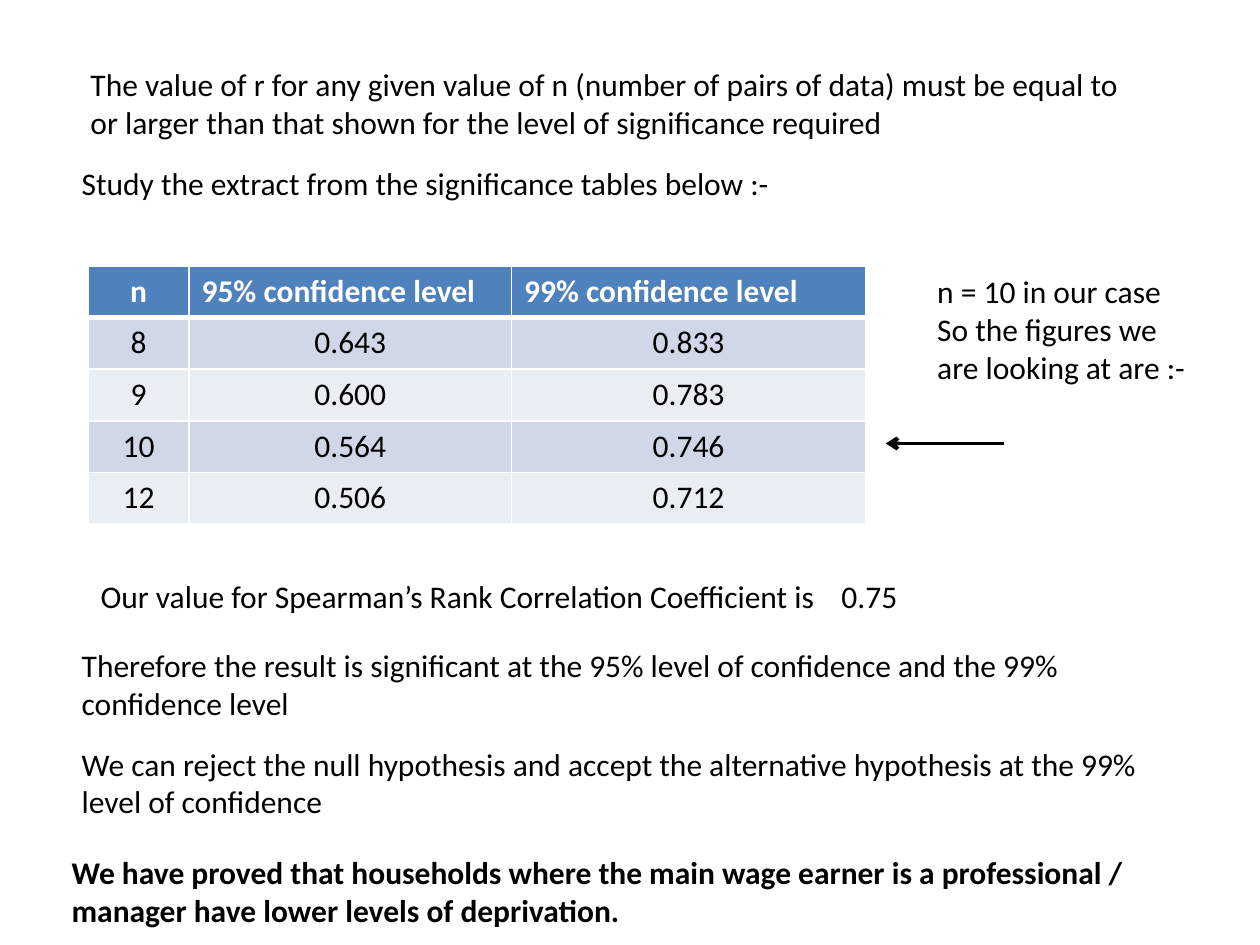
from lxml.etree import SubElement
from pptx import Presentation
from pptx.dml.color import RGBColor
from pptx.enum.shapes import MSO_CONNECTOR as Connector
from pptx.enum.text import MSO_AUTO_SIZE as AutoSize, PP_ALIGN as Align
from pptx.oxml.ns import qn
from pptx.util import Inches, Pt

BLACK, WHITE, HEADER_BLUE = "000000", "FFFFFF", "4F81BD"
BAND_FILLS = ("D0D8E8", "E9EDF4")

STATEMENTS = [
    (0.62, 0.47, 8.36, 0.71, False, [
        "The value of r for any given value of n (number of pairs of data) must be equal to "
        "or larger than that shown for the level of significance required"]),
    (0.55, 1.25, 6.72, 0.4, False, ["Study the extract from the significance tables below :-"]),
    (7.34, 2.11, 2.27, 1.01, False, [
        "n = 10 in our case", "So the figures we are looking at are :-"]),
    (0.55, 5.08, 8.52, 0.71, False, [
        "Therefore the result is significant at the 95% level of confidence and the 99% "
        "confidence level"]),
    (0.55, 5.86, 8.59, 0.71, False, [
        "We can reject the null hypothesis and accept the alternative hypothesis at the 99% "
        "level of confidence"]),
    (0.47, 6.72, 8.91, 0.71, True, [
        "We have proved that households where the main wage earner is a professional / "
        "manager have lower levels of deprivation."]),
]
SIGNIFICANCE = [
    ("n", "95% confidence level", "99% confidence level"),
    ("8", "0.643", "0.833"),
    ("9", "0.600", "0.783"),
    ("10", "0.564", "0.746"),
    ("12", "0.506", "0.712"),
]
COLUMN_WIDTHS = (0.8, 2.56, 2.81)
ROW_HEIGHT = 0.41


def rgb(color):
    return RGBColor.from_string(color)


def add_run(paragraph, text, color=BLACK, bold=False):
    run = paragraph.add_run()
    run.text = text
    run.font.name = "Calibri"
    run.font.size = Pt(18)
    run.font.bold = bold
    run.font.color.rgb = rgb(color)


def add_statement(slide, left, top, width, height, bold, lines):
    box = slide.shapes.add_textbox(Inches(left), Inches(top), Inches(width), Inches(height))
    frame = box.text_frame
    frame.word_wrap = True
    frame.auto_size = AutoSize.SHAPE_TO_FIT_TEXT
    for index, line in enumerate(lines):
        paragraph = frame.add_paragraph() if index else frame.paragraphs[0]
        add_run(paragraph, line, bold=bold)
    return frame


def add_coefficient(slide):
    frame = add_statement(slide, 0.7, 4.53, 7.97, 0.4, False, [
        "Our value for Spearman’s Rank Correlation Coefficient is"])
    result = frame.paragraphs[0]
    tabs = SubElement(result._p.get_or_add_pPr(), qn("a:tabLst"))
    SubElement(tabs, qn("a:tab"), pos=str(Inches(5.88)), algn="l")
    add_run(result, "\t0.75")


def add_border(cell, side, points):
    border = SubElement(cell._tc.get_or_add_tcPr(), qn(f"a:ln{side}"), w=str(Pt(points)))
    fill = SubElement(border, qn("a:solidFill"))
    SubElement(fill, qn("a:srgbClr"), val=WHITE)


def style_cell(cell, text, row, column):
    is_header = row == 0
    heavy_side = {0: "B", 1: "T"}.get(row)
    for side in "LRTB":
        add_border(cell, side, 3 if side == heavy_side else 1)
    cell.fill.solid()
    cell.fill.fore_color.rgb = rgb(HEADER_BLUE if is_header else BAND_FILLS[(row - 1) % 2])
    paragraph = cell.text_frame.paragraphs[0]
    paragraph.alignment = Align.LEFT if is_header and column else Align.CENTER
    add_run(paragraph, text, WHITE if is_header else BLACK, is_header)


def add_significance_table(slide):
    table = slide.shapes.add_table(
        len(SIGNIFICANCE), len(COLUMN_WIDTHS), Inches(0.7), Inches(2.11),
        Inches(sum(COLUMN_WIDTHS)), Inches(ROW_HEIGHT * len(SIGNIFICANCE))).table
    for column, width in zip(table.columns, COLUMN_WIDTHS):
        column.width = Inches(width)
    for row, values in enumerate(SIGNIFICANCE):
        table.rows[row].height = Inches(ROW_HEIGHT)
        for column, value in enumerate(values):
            style_cell(table.cell(row, column), value, row, column)


def add_arrow(slide, start, end, y):
    arrow = slide.shapes.add_connector(
        Connector.STRAIGHT, Inches(start), Inches(y), Inches(end), Inches(y))
    arrow.line.color.rgb = rgb(BLACK)
    arrow.line.width = Pt(2.25)
    SubElement(arrow.line._get_or_add_ln(), qn("a:tailEnd"), type="arrow")
    SubElement(arrow._element.spPr, qn("a:effectLst"))


def main():
    presentation = Presentation()
    presentation.slide_width, presentation.slide_height = Inches(10), Inches(7.5)
    slide = presentation.slides.add_slide(presentation.slide_layouts[6])
    for statement in STATEMENTS:
        add_statement(slide, *statement)
    add_coefficient(slide)
    add_significance_table(slide)
    add_arrow(slide, 7.97, 7.03, 3.52)
    presentation.save("out.pptx")


if __name__ == "__main__":
    main()
